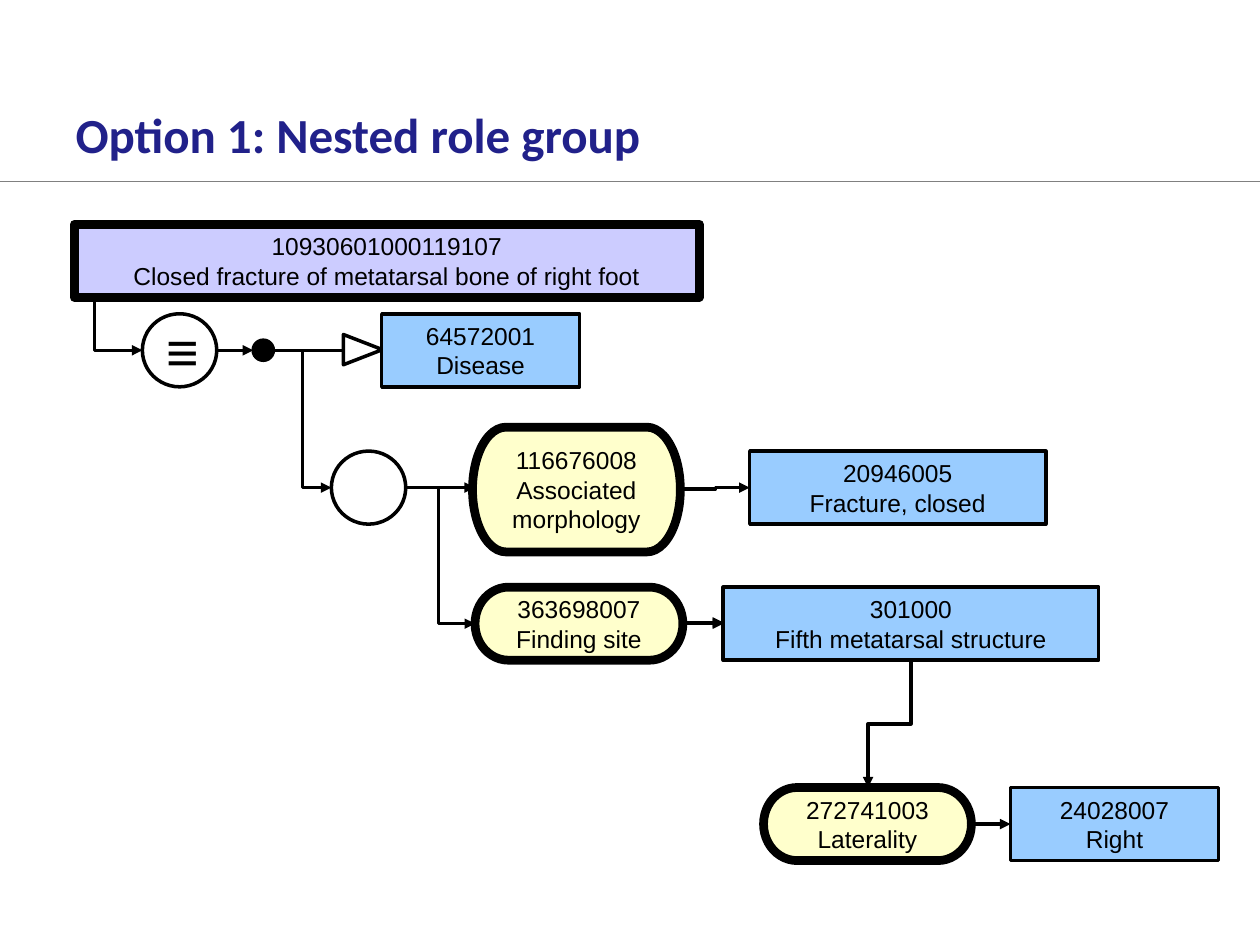
import pptx
import pptx.util
import pptx.dml.color
import pptx.enum.shapes
import pptx.enum.text
import pptx.oxml.ns
import lxml.etree

Inches = pptx.util.Inches
Pt = pptx.util.Pt
RGB = pptx.dml.color.RGBColor.from_string
Shape = pptx.enum.shapes.MSO_SHAPE
Link = pptx.enum.shapes.MSO_CONNECTOR
Align = pptx.enum.text.PP_ALIGN
Anchor = pptx.enum.text.MSO_ANCHOR
qn = pptx.oxml.ns.qn

hues = {
    "navy": "21218A", "rule": "808080", "black": "000000", "white": "FFFFFF",
    "lilac": "CCCCFF", "cream": "FFFFCC", "sky": "99CCFF",
}

deck = pptx.Presentation()
deck.slide_width, deck.slide_height = Inches(10), Inches(7.5)
slide = deck.slides.add_slide(deck.slide_layouts[5])


def style(text, size, face, hue, bold=False):
    looks = {"size": Pt(size), "name": face, "bold": bold}
    for para in text.paragraphs:
        for key, value in looks.items():
            setattr(para.font, key, value)
        para.font.color.rgb = RGB(hues[hue])


def join(kind, x1, y1, x2, y2, width=2, hue="black", arrow=True):
    ends = [Inches(n) for n in (x1, y1, x2, y2)]
    line = slide.shapes.add_connector(kind, *ends)
    line.line.width = Pt(width)
    line.line.color.rgb = RGB(hues[hue])
    if arrow:
        pen = line.line._get_or_add_ln()
        lxml.etree.SubElement(pen, qn("a:tailEnd"), type="triangle")
    lxml.etree.SubElement(line._element.spPr, qn("a:effectLst"))
    return line


join(Link.STRAIGHT, 0, 1.44, 10, 1.44, 0.75, "rule", False)

title = slide.shapes.title
place = {"left": 0.5, "top": 0.78, "width": 7.21, "height": 0.56}
for key, value in place.items():
    setattr(title, key, Inches(value))
text = title.text_frame
text.text = "Option 1: Nested role group"
text.vertical_anchor = Anchor.MIDDLE
for side in ("left", "top", "right", "bottom"):
    setattr(text, "margin_" + side, Inches(0.1))
text.paragraphs[0].alignment = Align.LEFT
style(text, 28, "Calibri", "navy", True)

rect, pill, oval = Shape.RECTANGLE, Shape.FLOWCHART_TERMINATOR, Shape.OVAL
nodes = [
    ("focus", rect, 0.59, 1.78, 4.96, 0.58, "lilac", 5,
     "10930601000119107\nClosed fracture of metatarsal bone of right foot"),
    ("morph", pill, 3.75, 3.39, 1.65, 0.99, "cream", 5,
     "116676008\nAssociated morphology"),
    ("site", pill, 3.77, 4.66, 1.65, 0.58, "cream", 5, "363698007\nFinding site"),
    ("side", pill, 6.06, 6.25, 1.65, 0.58, "cream", 5, "272741003\nLaterality"),
    ("group", oval, 2.63, 3.58, 0.59, 0.58, "white", 2, ""),
    ("equal", oval, 1.13, 2.49, 0.59, 0.58, "white", 2, "≡"),
    ("dot", oval, 2.01, 2.7, 0.16, 0.16, "black", 2, ""),
    ("is a", Shape.ISOSCELES_TRIANGLE, 2.76, 2.62, 0.24, 0.31, None, 2, ""),
    ("disease", rect, 3.03, 2.49, 1.57, 0.58, "sky", 2, "64572001\nDisease"),
    ("closed", rect, 5.95, 3.58, 2.35, 0.58, "sky", 2,
     "20946005\nFracture, closed"),
    ("fifth", rect, 5.74, 4.66, 2.98, 0.58, "sky", 2,
     "301000\nFifth metatarsal structure"),
    ("right", rect, 8.02, 6.25, 1.65, 0.58, "sky", 2, "24028007\nRight"),
]
made = {}
for name, kind, x, y, w, h, fill, width, words in nodes:
    node = slide.shapes.add_shape(kind, Inches(x), Inches(y), Inches(w), Inches(h))
    node.shadow.inherit = False
    node.line.width = Pt(width)
    node.line.color.rgb = RGB(hues["black"])
    if fill:
        node.fill.solid()
        node.fill.fore_color.rgb = RGB(hues[fill])
    else:
        node.fill.background()
    if words:
        text = node.text_frame
        text.text = words
        text.word_wrap = True
        text.vertical_anchor = Anchor.MIDDLE
        for para in text.paragraphs:
            para.alignment = Align.CENTER
        if name == "equal":
            style(text, 32, "Courier New", "black")
        else:
            style(text, 14, "Arial", "black")
    made[name] = node
made["is a"].rotation = 90

join(Link.STRAIGHT, 2.17, 2.78, 2.72, 2.78, arrow=False)
for ends in [
    (1.72, 2.78, 2.01, 2.78),
    (3.22, 3.87, 3.77, 3.87),
    (5.42, 4.94, 5.74, 4.94),
]:
    join(Link.STRAIGHT, *ends)

for start, stop in [("site", "fifth"), ("side", "right")]:
    line = join(Link.STRAIGHT, 0, 0, 1, 0)
    line.begin_connect(made[start], 3)
    line.end_connect(made[stop], 1)

for ends in [(5.41, 3.88, 5.95, 3.87), (2.17, 2.78, 2.63, 3.87)]:
    join(Link.ELBOW, *ends)

for x1, y1, x2, y2, form in [
    (0.75, 2.33, 1.13, 2.78, "bentConnector2"),
    (3.48, 3.88, 3.77, 4.95, "bentConnector2"),
    (7.23, 5.24, 6.89, 6.25, "bentConnector3"),
]:
    mid, level = (x1 + x2) / 2, (y1 + y2) / 2
    turn = 1 if x2 > x1 else -1
    run, rise = turn * (y2 - y1) / 2, abs(x2 - x1) / 2
    line = join(Link.ELBOW, mid + run, level - rise, mid - run, level + rise)
    frame = line._element.spPr
    frame.find(qn("a:xfrm")).set("rot", str((180 + 90 * turn) * 60000))
    frame.find(qn("a:prstGeom")).set("prst", form)

deck.save("out.pptx")
